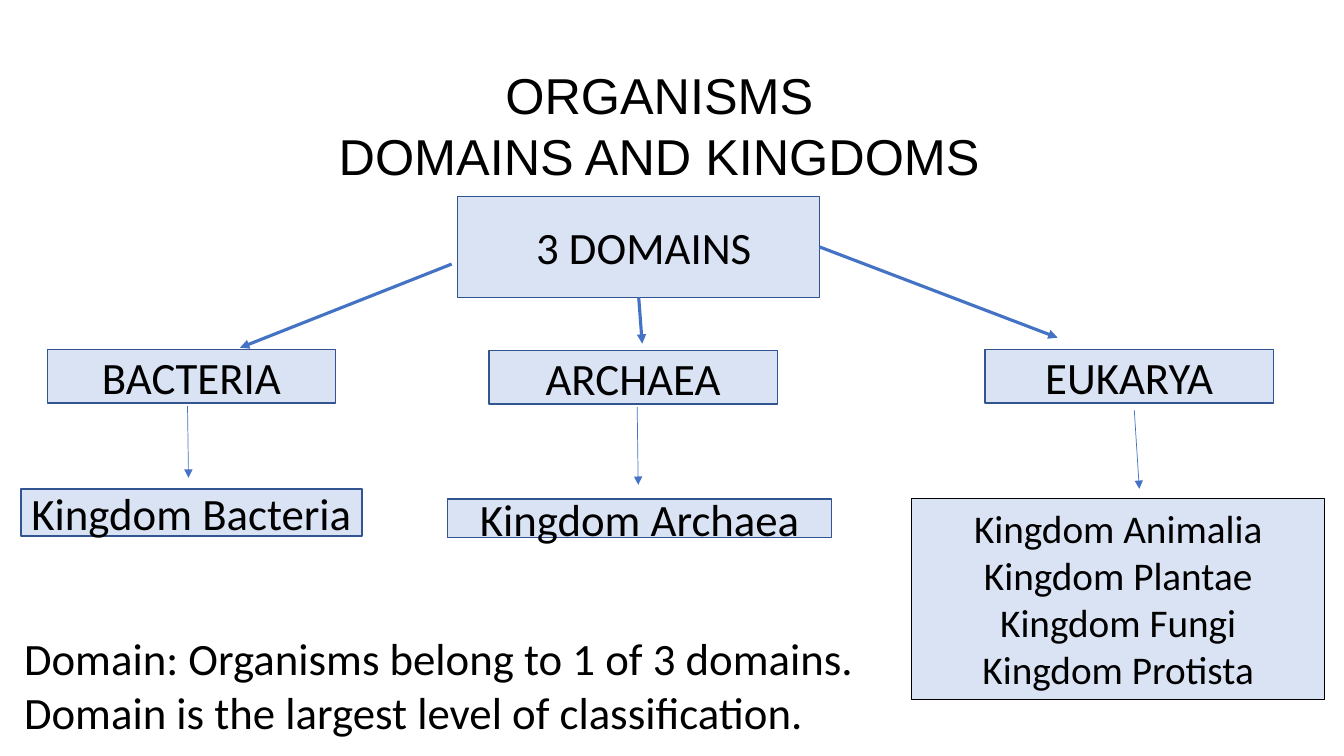
from dataclasses import dataclass

from lxml import etree
from pptx import Presentation
from pptx.dml.color import RGBColor
from pptx.enum.shapes import MSO_CONNECTOR, MSO_SHAPE
from pptx.enum.text import MSO_ANCHOR, PP_ALIGN
from pptx.oxml.ns import qn
from pptx.shapes.autoshape import Shape
from pptx.slide import Slide
from pptx.util import Inches, Pt

RECT = MSO_SHAPE.RECTANGLE
STRAIGHT = MSO_CONNECTOR.STRAIGHT
LEFT, CENTER = PP_ALIGN.LEFT, PP_ALIGN.CENTER
TOP, MIDDLE = MSO_ANCHOR.TOP, MSO_ANCHOR.MIDDLE


@dataclass(frozen=True)
class Theme:
    ink: RGBColor = RGBColor(0, 0, 0)
    fill: RGBColor = RGBColor(0xDA, 0xE3, 0xF3)
    edge: RGBColor = RGBColor(0x32, 0x54, 0x91)
    arrow: RGBColor = RGBColor(0x44, 0x72, 0xC4)
    head: str = "Arial"
    body: str = "Calibri"
    title: float = 36
    large: float = 32
    small: float = 28
    border: float = 1
    thin: float = 0.75
    thick: float = 2.25
    hair: float = 0.5


THEME = Theme()


@dataclass(frozen=True)
class Label:
    lines: tuple[str, ...]
    left: float
    top: float
    width: float
    height: float
    size: float = THEME.large
    font: str = THEME.body
    align: PP_ALIGN = CENTER
    anchor: MSO_ANCHOR = MIDDLE
    edge: RGBColor = THEME.edge
    border: float = THEME.border


@dataclass(frozen=True)
class Arrow:
    start: tuple[float, float]
    end: tuple[float, float]
    width: float
    side: int | None = None


TITLE = Label(("ORGANISMS", "DOMAINS AND KINGDOMS"), 0.78, 0.59, 11.52, 1.31,
              THEME.title, THEME.head, anchor=TOP)
NOTE = Label(("Domain: Organisms belong to 1 of 3 domains.",
              "Domain is the largest level of classification."),
             0.14, 6.21, 8.58, 1.18, align=LEFT, anchor=TOP)
ROOT = Label((" 3 DOMAINS",), 4.54, 1.95, 3.59, 1)
BOXES = (
    Label(("BACTERIA",), 0.47, 3.47, 2.86, 0.53),
    Label(("ARCHAEA",), 4.85, 3.48, 2.86, 0.53),
    Label(("EUKARYA",), 9.77, 3.47, 2.86, 0.53),
    Label(("Kingdom Archaea",), 4.44, 4.95, 3.81, 0.38),
    Label(("Kingdom Bacteria",), 0.21, 4.85, 3.38, 0.47),
    Label(("Kingdom Animalia", "Kingdom Plantae", "Kingdom Fungi", "Kingdom Protista"),
          9.04, 4.95, 4.1, 1.99, THEME.small, anchor=TOP,
          edge=THEME.ink, border=THEME.thin),
)
ARROWS = (
    Arrow((4.48, 2.62), (2.38, 3.45), THEME.thick),
    Arrow((6.33, 2.96), (6.37, 3.41), THEME.thick, 2),
    Arrow((8.16, 2.44), (10.49, 3.35), THEME.thick, 3),
    Arrow((1.86, 4.03), (1.87, 4.74), THEME.hair),
    Arrow((6.32, 4.04), (6.33, 4.81), THEME.hair),
    Arrow((11.25, 4.07), (11.3, 4.85), THEME.hair),
)


def place(label: Label) -> tuple[Inches, ...]:
    return tuple(Inches(v) for v in (label.left, label.top, label.width, label.height))


def write(shape: Shape, label: Label) -> None:
    frame = shape.text_frame
    frame.word_wrap = True
    frame.vertical_anchor = label.anchor
    for index, line in enumerate(label.lines):
        para = frame.add_paragraph() if index else frame.paragraphs[0]
        para.alignment = label.align
        run = para.add_run()
        run.text = line
        run.font.name = label.font
        run.font.size = Pt(label.size)
        run.font.color.rgb = THEME.ink


def add_text(slide: Slide, label: Label) -> None:
    write(slide.shapes.add_textbox(*place(label)), label)


def add_box(slide: Slide, label: Label) -> Shape:
    box = slide.shapes.add_shape(RECT, *place(label))
    box.shadow.inherit = False
    box.fill.solid()
    box.fill.fore_color.rgb = THEME.fill
    box.line.color.rgb = label.edge
    box.line.width = Pt(label.border)
    write(box, label)
    return box


def add_arrow(slide: Slide, arrow: Arrow, root: Shape) -> None:
    ends = (Inches(v) for v in (*arrow.start, *arrow.end))
    link = slide.shapes.add_connector(STRAIGHT, *ends)
    if arrow.side is not None:
        link.begin_connect(root, arrow.side)
    link.line.color.rgb = THEME.arrow
    link.line.width = Pt(arrow.width)
    props = link.element.spPr
    etree.SubElement(props.find(qn("a:ln")), qn("a:tailEnd"), type="triangle")
    etree.SubElement(props, qn("a:effectLst"))


def main() -> None:
    deck = Presentation()
    deck.slide_width, deck.slide_height = Inches(13.33), Inches(7.5)
    slide = deck.slides.add_slide(deck.slide_layouts[6])
    add_text(slide, TITLE)
    root = add_box(slide, ROOT)
    for label in BOXES:
        add_box(slide, label)
    for arrow in ARROWS:
        add_arrow(slide, arrow, root)
    add_text(slide, NOTE)
    deck.save("out.pptx")


if __name__ == "__main__":
    main()
